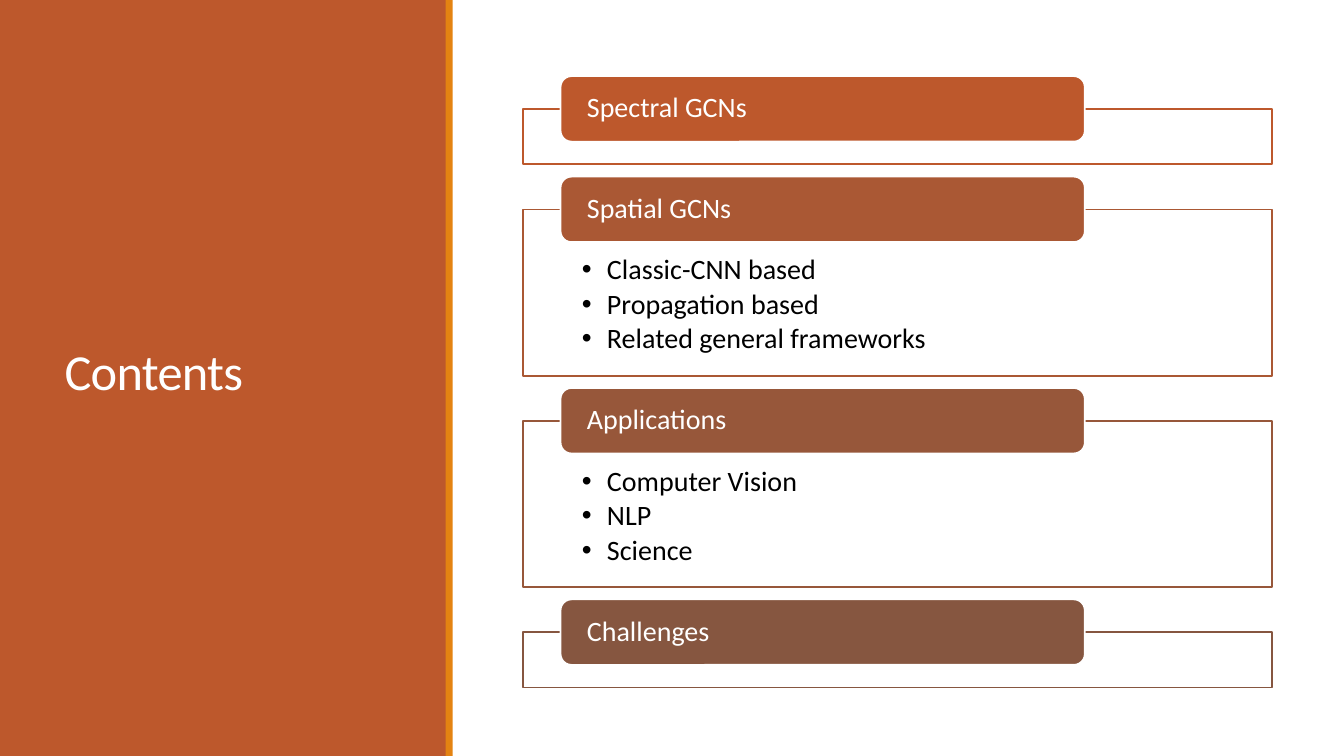
"""Build a contents slide: a coloured title panel beside four tabbed sections."""
from pptx import Presentation
from pptx.dml.color import RGBColor
from pptx.enum.shapes import MSO_SHAPE as Shape
from pptx.enum.text import MSO_ANCHOR as Anchor, MSO_AUTO_SIZE as AutoSize, PP_ALIGN as Align
from pptx.util import Inches, Pt

COLORS = {
    "panel": "BD582C", "stripe": "E48312", "white": "FFFFFF", "black": "000000",
    "Spectral GCNs": "BD582C", "Spatial GCNs": "AA5834",
    "Applications": "97573A", "Challenges": "865640",
}
SECTIONS = {
    "Spectral GCNs": [],
    "Spatial GCNs": ["Classic-CNN based", "Propagation based", "Related general frameworks"],
    "Applications": ["Computer Vision", "NLP", "Science"],
    "Challenges": [],
}
FRAME_LEFT, FRAME_WIDTH, FRAME_GAP = 5.19, 7.43, 0.447
TAB_LEFT, TAB_WIDTH, TAB_HEIGHT = 5.56, 5.2, 0.65
EMPTY_HEIGHT, LIST_HEIGHT = 0.55, 1.65

deck = Presentation()
deck.slide_width, deck.slide_height = Inches(13.33), Inches(7.5)
slide = deck.slides.add_slide(deck.slide_layouts[3])
title, *lists = slide.placeholders
free_lists = iter(lists)


def add_block(kind, box, fill, line=None):
    block = slide.shapes.add_shape(kind, *map(Inches, box))
    block.shadow.inherit = False
    block.fill.solid()
    block.fill.fore_color.rgb = RGBColor.from_string(COLORS[fill])
    if line:
        block.line.color.rgb = RGBColor.from_string(COLORS[line])
        block.line.width = Pt(1.25)
    else:
        block.line.fill.background()
    return block


def write(holder, lines, size, color, insets, spacing, after=0, anchor=Anchor.MIDDLE):
    frame = holder.text_frame
    frame.text = "\n".join(lines)
    frame.word_wrap, frame.auto_size = True, AutoSize.NONE
    frame.vertical_anchor = anchor
    frame.margin_left, frame.margin_top, frame.margin_right, frame.margin_bottom = map(Inches, insets)
    for paragraph in frame.paragraphs:
        paragraph.alignment = Align.LEFT
        paragraph.line_spacing = spacing
        paragraph.space_before, paragraph.space_after = Pt(0), Pt(after)
        font = paragraph.runs[0].font
        font.name, font.size = "Calibri", Pt(size)
        font.color.rgb = RGBColor.from_string(COLORS[color])


add_block(Shape.RECTANGLE, (0, 0, 4.43, 7.5), "panel")
add_block(Shape.RECTANGLE, (4.42, 0, 0.07, 7.5), "stripe")

title.left, title.top, title.width, title.height = map(Inches, (0.54, 0.57, 3.37, 6.31))
write(title, ["Contents"], 36, "white", (0.1, 0.05, 0.1, 0.05), 0.85)
title.text_frame.paragraphs[0].runs[0].font._element.set("spc", "-50")
slide.shapes._spTree.append(title._element)

top = 1.08
for heading, items in SECTIONS.items():
    height = LIST_HEIGHT if items else EMPTY_HEIGHT
    box = (FRAME_LEFT, top, FRAME_WIDTH, height)
    add_block(Shape.RECTANGLE, box, "white", heading)
    if items:
        topics = next(free_lists)
        topics.left, topics.top, topics.width, topics.height = map(Inches, box)
        write(topics, items, 20, "black", (0.58, 0.46, 0.58, 0.16), 0.9, 3, Anchor.TOP)
        for paragraph in topics.text_frame.paragraphs:
            indents = paragraph._p.get_or_add_pPr()
            indents.set("marL", str(Inches(0.25)))
            indents.set("indent", str(Inches(-0.25)))
        slide.shapes._spTree.append(topics._element)
    tab_box = (TAB_LEFT, top - TAB_HEIGHT / 2, TAB_WIDTH, TAB_HEIGHT)
    tab = add_block(Shape.ROUNDED_RECTANGLE, tab_box, heading, "white")
    write(tab, [heading], 20, "white", (0.23, 0, 0.23, 0), 0.9)
    top += height + FRAME_GAP

deck.save("out.pptx")
